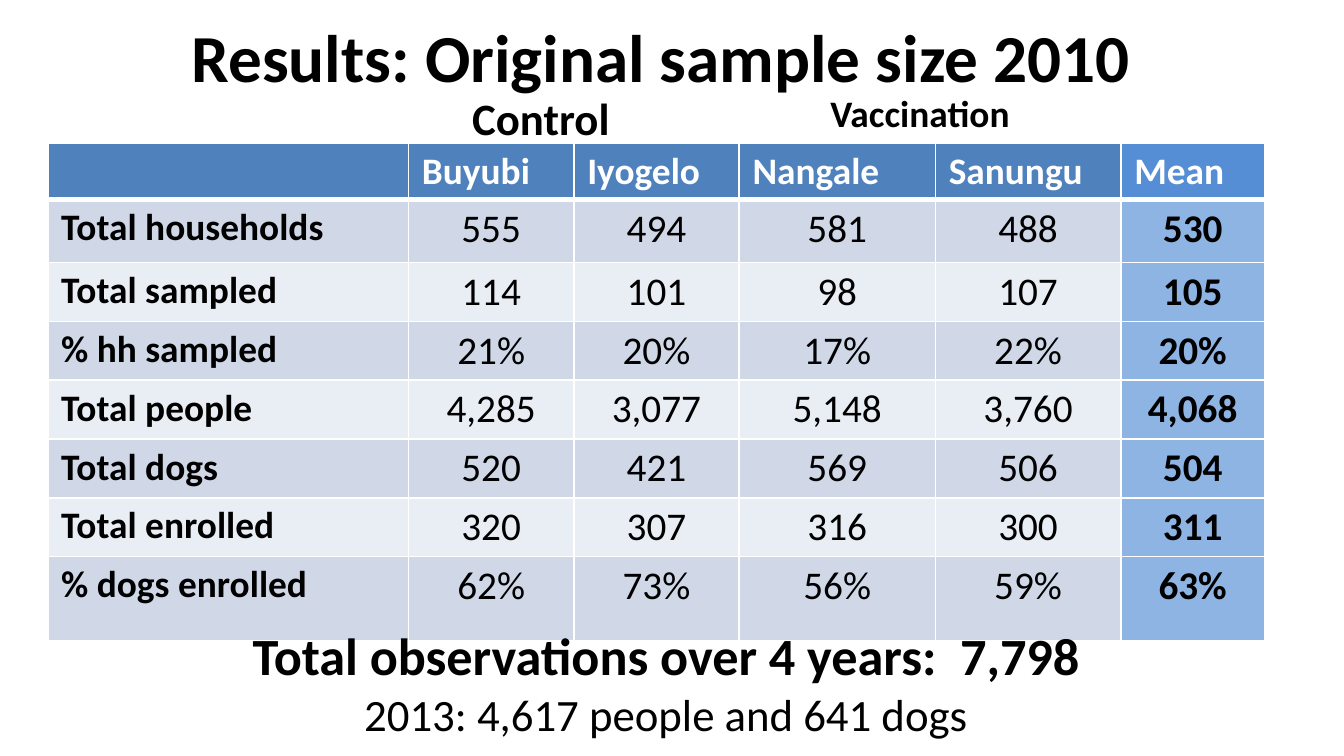
from dataclasses import dataclass
from typing import Any

from lxml.etree import SubElement
from pptx import Presentation
from pptx.dml.color import RGBColor
from pptx.enum.text import MSO_ANCHOR, MSO_AUTO_SIZE, PP_ALIGN
from pptx.oxml.ns import qn
from pptx.util import Emu, Pt

EMU_PER_PX = 4572
FONT = "Calibri"
BLACK = RGBColor(0x00, 0x00, 0x00)
WHITE = RGBColor(0xFF, 0xFF, 0xFF)
HEADER_BLUE = RGBColor(0x4F, 0x81, 0xBD)
MEAN_HEADER_BLUE = RGBColor(0x55, 0x8E, 0xD5)
MEAN_BLUE = RGBColor(0x8E, 0xB4, 0xE3)
BANDS = (RGBColor(0xD0, 0xD8, 0xE8), RGBColor(0xE9, 0xED, 0xF4))

TABLE_HEIGHT = 734
COLUMN_WIDTHS = (537, 246, 246, 292, 276, 214)
ROW_HEIGHTS = (78, 94, 72, 72, 88, 72, 72, 126)
ROWS = (
    ("", "Buyubi", "Iyogelo", "Nangale", "Sanungu", "Mean"),
    ("Total households", "555", "494", "581", "488", "530"),
    ("Total sampled", "114", "101", "98", "107", "105"),
    ("% hh sampled", "21%", "20%", "17%", "22%", "20%"),
    ("Total people", "4,285", "3,077", "5,148", "3,760", "4,068"),
    ("Total dogs", "520", "421", "569", "506", "504"),
    ("Total enrolled", "320", "307", "316", "300", "311"),
    ("% dogs enrolled", "62%", "73%", "56%", "59%", "63%"),
)
MEAN_COLUMN = len(COLUMN_WIDTHS) - 1


@dataclass(frozen=True)
class Line:
    text: str
    size: int
    bold: bool = True
    color: RGBColor = BLACK
    align: PP_ALIGN = PP_ALIGN.LEFT


@dataclass(frozen=True)
class Label:
    left: int
    top: int
    width: int
    height: int
    lines: tuple[Line, ...]


TITLE = Label(84, -12, 1800, 188, (
    Line("Results: Original sample size 2010", 36, align=PP_ALIGN.CENTER),
))
LABELS = (
    Label(683, 125, 384, 100, (Line("Control", 24),)),
    Label(1216, 124, 516, 88, (Line("Vaccination", 20),)),
    Label(85, 918, 1812, 196, (
        Line("Total observations over 4 years:  7,798", 28, align=PP_ALIGN.CENTER),
        Line("2013: 4,617 people and 641 dogs", 24, False, align=PP_ALIGN.CENTER),
    )),
)


def px(length: int) -> Emu:
    return Emu(length * EMU_PER_PX)


def apply(target: Any, values: dict[str, Any]) -> None:
    for name, value in values.items():
        setattr(target, name, value)


def write_lines(frame: Any, lines: tuple[Line, ...]) -> None:
    for index, line in enumerate(lines):
        para = frame.add_paragraph() if index else frame.paragraphs[0]
        para.alignment = line.align
        span = para.add_run()
        span.text = line.text
        apply(span.font, {"name": FONT, "size": Pt(line.size), "bold": line.bold})
        span.font.color.rgb = line.color


def fill_label(box: Any, label: Label, anchor: MSO_ANCHOR) -> None:
    apply(box, {name: px(getattr(label, name)) for name in ("left", "top", "width", "height")})
    apply(box.text_frame, {
        "word_wrap": True,
        "auto_size": MSO_AUTO_SIZE.NONE,
        "vertical_anchor": anchor,
    })
    write_lines(box.text_frame, label.lines)


def draw_label(slide: Any, label: Label) -> None:
    box = slide.shapes.add_textbox(0, 0, 0, 0)
    fill_label(box, label, MSO_ANCHOR.TOP)


def set_borders(cell: Any, widths: dict[str, int]) -> None:
    properties = cell._tc.get_or_add_tcPr()
    for side, width in widths.items():
        line = SubElement(properties, qn(f"a:ln{side}"), w=str(Pt(width)))
        fill = SubElement(line, qn("a:solidFill"))
        SubElement(fill, qn("a:srgbClr"), val=str(WHITE))


def cell_fill(row: int, column: int) -> RGBColor:
    if column == MEAN_COLUMN:
        return MEAN_BLUE if row else MEAN_HEADER_BLUE
    return BANDS[(row - 1) % 2] if row else HEADER_BLUE


def cell_line(text: str, row: int, column: int) -> Line:
    if row == 0:
        return Line(text, 20, color=WHITE)
    if column == 0:
        return Line(text, 20)
    return Line(text, 21, column == MEAN_COLUMN, align=PP_ALIGN.CENTER)


def draw_table(slide: Any) -> None:
    frame = slide.shapes.add_table(
        len(ROWS), len(COLUMN_WIDTHS), px(71), px(213),
        px(sum(COLUMN_WIDTHS)), px(TABLE_HEIGHT),
    )
    table = frame.table
    apply(table, {"first_row": True, "horz_banding": False})
    for column, width in zip(table.columns, COLUMN_WIDTHS):
        column.width = px(width)
    for row, height in zip(table.rows, ROW_HEIGHTS):
        row.height = px(height)
    frame.height = px(TABLE_HEIGHT)
    for row, texts in enumerate(ROWS):
        for column, text in enumerate(texts):
            cell = table.cell(row, column)
            apply(cell, {"margin_left": px(20), "margin_right": px(20),
                         "margin_top": px(8), "margin_bottom": px(8)})
            set_borders(cell, {
                "L": 1, "R": 1,
                "T": 3 if row == 1 else 1,
                "B": 3 if row == 0 else 1,
            })
            cell.fill.solid()
            cell.fill.fore_color.rgb = cell_fill(row, column)
            if text:
                write_lines(cell.text_frame, (cell_line(text, row, column),))


def main() -> None:
    deck = Presentation()
    apply(deck, {"slide_width": px(2000), "slide_height": px(1125)})
    page = deck.slides.add_slide(deck.slide_layouts.get_by_name("Title Only"))
    fill_label(page.shapes.title, TITLE, MSO_ANCHOR.MIDDLE)
    draw_table(page)
    for label in LABELS:
        draw_label(page, label)
    deck.save("out.pptx")


if __name__ == "__main__":
    main()
